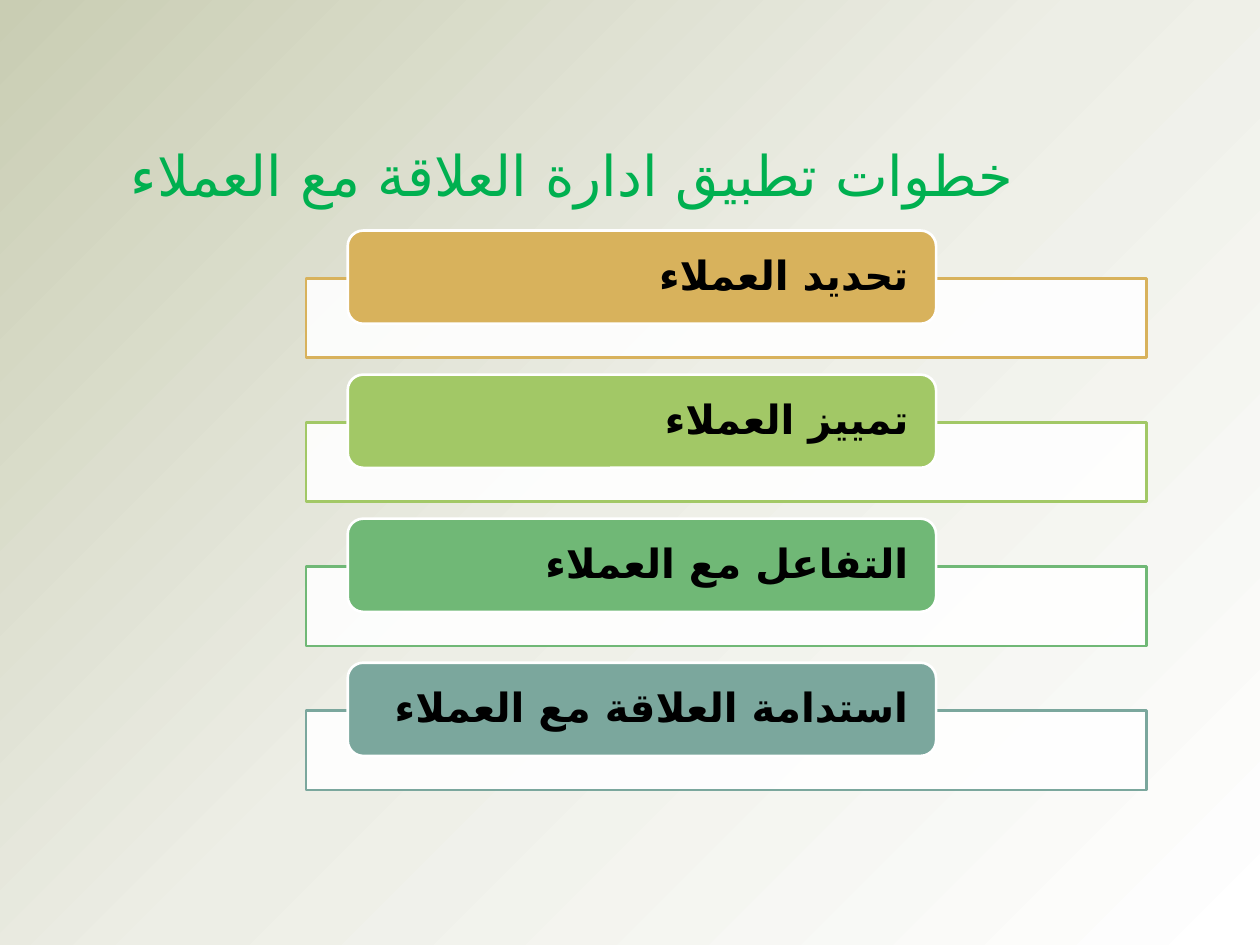
import copy
import pptx
import pptx.dml.color
import pptx.enum.shapes
import pptx.enum.text
import pptx.oxml
import pptx.oxml.ns
import pptx.util

COLORS = {
    "title": "00B050", "text": "000000", "white": "FFFFFF",
    "gold": "D8B25C", "lime": "A2C866", "green": "70B876", "teal": "7BA79D",
    "sage": "C9CDB3", "mist": "EDEEE6",
}
FONT = "Cambria"
ARABIC_FONT = "DejaVu Sans"
TITLE = "خطوات تطبيق ادارة العلاقة مع العملاء"
STEPS = [
    ("تحديد العملاء", "gold"),
    ("تمييز العملاء", "lime"),
    ("التفاعل مع العملاء", "green"),
    ("استدامة العلاقة مع العملاء", "teal"),
]
BACKGROUND = [(0, "sage"), (0.5, "mist"), (1, "white")]
FIRST_TOP, LAST_TOP = 1.83, 5.26
STEP_PITCH = (LAST_TOP - FIRST_TOP) / (len(STEPS) - 1)
BAR_OFFSET = 0.38

Inches = pptx.util.Inches
SHAPES = pptx.enum.shapes.MSO_SHAPE
qn = pptx.oxml.ns.qn


def rgb(name):
    return pptx.dml.color.RGBColor.from_string(COLORS[name])


def write_text(box, text, size, color, bold=False, side=0.1, edge=0.05,
               anchor="TOP", wrap=True, line_spacing=None):
    frame = box.text_frame
    frame.word_wrap = wrap
    frame.vertical_anchor = getattr(pptx.enum.text.MSO_ANCHOR, anchor)
    frame.margin_left = frame.margin_right = Inches(side)
    frame.margin_top = frame.margin_bottom = Inches(edge)
    para = frame.paragraphs[0]
    para.alignment = pptx.enum.text.PP_ALIGN.RIGHT
    para.line_spacing = line_spacing
    para._p.get_or_add_pPr().set("rtl", "1")
    span = para.add_run()
    span.text = text
    span.font.name = FONT
    span.font.size = pptx.util.Pt(size)
    span.font.bold = bold
    span.font.color.rgb = rgb(color)
    script_font = pptx.oxml.parse_xml(
        f'<a:cs {pptx.oxml.ns.nsdecls("a")} typeface="{ARABIC_FONT}"/>')
    span.font._element.append(script_font)


def add_panel(page, kind, place, fill, line, opacity=None):
    panel = page.shapes.add_shape(kind, *map(Inches, place))
    panel.shadow.inherit = False
    panel.fill.solid()
    panel.fill.fore_color.rgb = rgb(fill)
    panel.line.color.rgb = rgb(line)
    panel.line.width = pptx.util.Pt(1.5)
    if opacity is not None:
        tint = panel._element.spPr.find(qn("a:solidFill")).find(qn("a:srgbClr"))
        alpha = pptx.oxml.parse_xml(
            f'<a:alpha {pptx.oxml.ns.nsdecls("a")} val="{opacity * 1000}"/>')
        tint.append(alpha)
    return panel


def paint_background(page):
    fill = page.background.fill
    fill.gradient()
    fill.gradient_angle = 315
    stop_list = next(page.element.iter(qn("a:gsLst")))
    while len(stop_list) < len(BACKGROUND):
        stop_list.append(copy.deepcopy(stop_list[-1]))
    for stop, (position, color) in zip(fill.gradient_stops, BACKGROUND):
        stop.position = position
        stop.color.rgb = rgb(color)


def main():
    deck = pptx.Presentation()
    deck.slide_width, deck.slide_height = Inches(10), Inches(7.5)
    page = deck.slides.add_slide(deck.slide_layouts[6])
    paint_background(page)

    title = page.shapes.add_textbox(*map(Inches, (0.91, 1.07, 7.24, 0.64)))
    write_text(title, TITLE, 32, "title")

    for index, (label, color) in enumerate(STEPS):
        top = FIRST_TOP + index * STEP_PITCH
        add_panel(page, SHAPES.RECTANGLE, (2.43, top + BAR_OFFSET, 6.67, 0.63),
                  "white", color, opacity=90)
        pill = add_panel(page, SHAPES.ROUNDED_RECTANGLE, (2.76, top, 4.67, 0.74),
                         color, "white")
        write_text(pill, label, 23, "text", bold=True, side=0.18, edge=0,
                   anchor="MIDDLE", line_spacing=0.9)

    deck.save("out.pptx")


if __name__ == "__main__":
    main()
